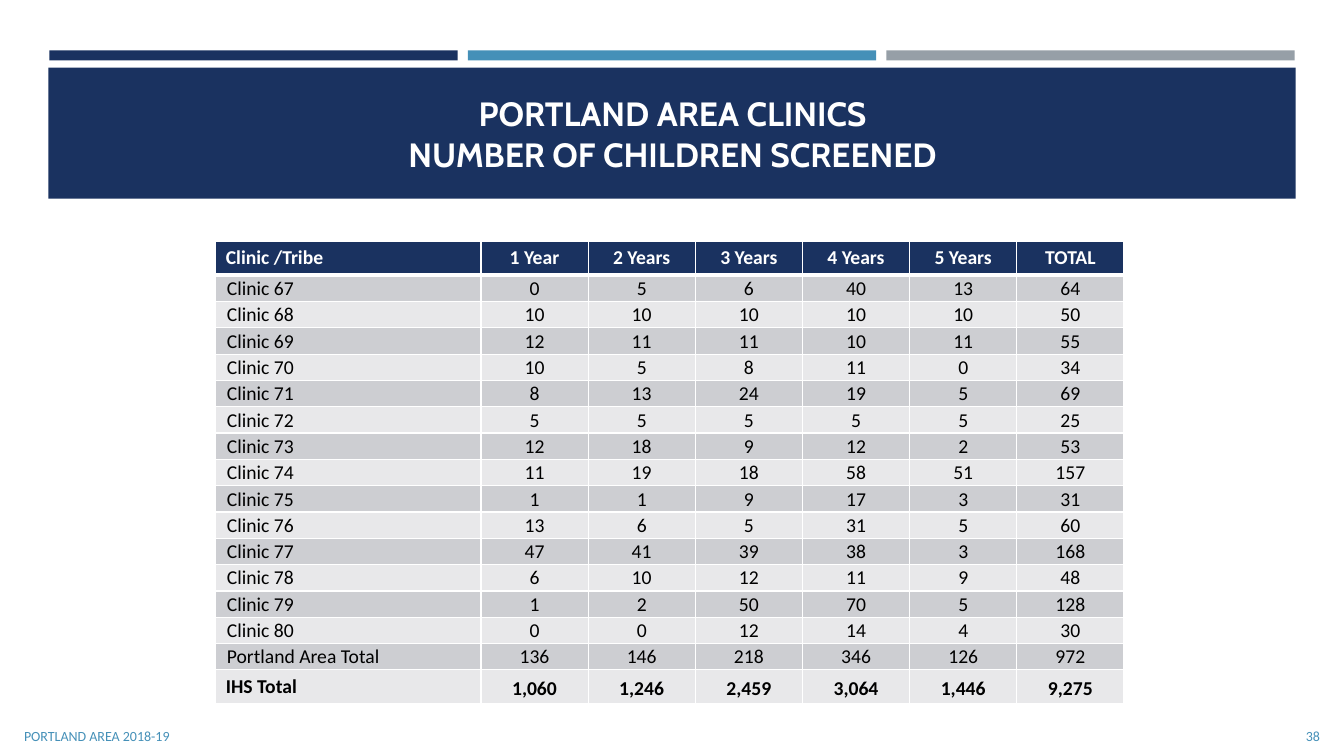
from lxml.etree import SubElement
from pptx import Presentation
from pptx.dml.color import RGBColor
from pptx.enum.shapes import MSO_SHAPE
from pptx.enum.text import MSO_ANCHOR, MSO_AUTO_SIZE, PP_ALIGN
from pptx.oxml.ns import qn
from pptx.util import Inches, Pt

COLORS = {"navy": "1A3260", "blue": "4590B8", "gray": "969FA7",
          "dark": "CDCED2", "light": "E8E8EA", "white": "FFFFFF", "black": "000000"}
HEADS = ["Clinic /Tribe", "1 Year", "2 Years", "3 Years", "4 Years", "5 Years", "TOTAL"]
COUNTS = [
    [0, 5, 6, 40, 13, 64],
    [10, 10, 10, 10, 10, 50],
    [12, 11, 11, 10, 11, 55],
    [10, 5, 8, 11, 0, 34],
    [8, 13, 24, 19, 5, 69],
    [5, 5, 5, 5, 5, 25],
    [12, 18, 9, 12, 2, 53],
    [11, 19, 18, 58, 51, 157],
    [1, 1, 9, 17, 3, 31],
    [13, 6, 5, 31, 5, 60],
    [47, 41, 39, 38, 3, 168],
    [6, 10, 12, 11, 9, 48],
    [1, 2, 50, 70, 5, 128],
    [0, 0, 12, 14, 4, 30],
]
AREA = ["Portland Area Total", 136, 146, 218, 346, 126, 972]
IHS = ["IHS Total", 1060, 1246, 2459, 3064, 1446, 9275]


class Deck:
    def __init__(self):
        self.prs = Presentation()
        self.prs.slide_width, self.prs.slide_height = Inches(13.33), Inches(7.5)
        self.slide = self.prs.slides.add_slide(self.prs.slide_layouts[5])
        self.shapes = self.slide.shapes

    def color(self, name):
        return RGBColor.from_string(COLORS[name])

    def run(self, para, text, size, color, bold=False, font="Calibri"):
        run = para.add_run()
        run.text = text
        run.font.name, run.font.size, run.font.bold = font, Pt(size), bold
        run.font.color.rgb = self.color(color)

    def bar(self, left, top, width, height, color):
        bar = self.shapes.add_shape(MSO_SHAPE.RECTANGLE, Inches(left), Inches(top),
                                    Inches(width), Inches(height))
        bar.shadow.inherit = False
        bar.fill.solid()
        bar.fill.fore_color.rgb = self.color(color)
        bar.line.fill.background()

    def title(self, lines, left, top, width, height):
        """Fill the title placeholder and bring it in front of the band."""
        title = self.shapes.title
        title.left, title.top = Inches(left), Inches(top)
        title.width, title.height = Inches(width), Inches(height)
        frame = title.text_frame
        frame.auto_size, frame.word_wrap = MSO_AUTO_SIZE.NONE, True
        frame.vertical_anchor = MSO_ANCHOR.MIDDLE
        para = frame.paragraphs[0]
        para.alignment = PP_ALIGN.CENTER
        for i, line in enumerate(lines):
            if i:
                para.add_line_break()
            self.run(para, line, 24, "white", True, "Cabin")
        title.element.getparent().append(title.element)

    def note(self, text, left, width, align):
        box = self.shapes.add_textbox(Inches(left), Inches(7.1), Inches(width), Inches(0.4))
        frame = box.text_frame
        frame.word_wrap, frame.vertical_anchor = True, MSO_ANCHOR.MIDDLE
        para = frame.paragraphs[0]
        para.alignment = align
        self.run(para, text, 10, "blue")

    def edge(self, cell, side, width):
        props = cell._tc.get_or_add_tcPr()
        line = SubElement(props, qn("a:ln" + side), w=str(Pt(width)))
        fill = SubElement(line, qn("a:solidFill"))
        SubElement(fill, qn("a:srgbClr"), val=COLORS["white"])

    def cell(self, cell, text, row, col, last):
        head, total = row == 0, row == last
        for side in "LRTB":
            thick = (head and side == "B") or (row == 1 and side == "T")
            self.edge(cell, side, 3 if thick else 1)
        cell.fill.solid()
        shade = "navy" if head else "dark" if row % 2 else "light"
        cell.fill.fore_color.rgb = self.color(shade)
        cell.vertical_anchor = MSO_ANCHOR.MIDDLE
        para = cell.text_frame.paragraphs[0]
        if col:
            para.alignment = PP_ALIGN.CENTER
        if total and col:
            cell.margin_left = cell.margin_right = Inches(0.07)
            cell.margin_top = cell.margin_bottom = 0
            para.line_spacing = 1.15
        elif not head and not total:
            cell.margin_left = cell.margin_right = cell.margin_top = Inches(0.01)
            cell.margin_bottom = 0
            if not col:
                para._p.get_or_add_pPr().set("marL", str(Inches(0.1)))
        self.run(para, text, 14, "white" if head else "black", head or total)

    def table(self, rows, left, top, width, height):
        last = len(rows) - 1
        table = self.shapes.add_table(len(rows), len(rows[0]), Inches(left), Inches(top),
                                      Inches(width), Inches(height)).table
        table.horz_banding = False
        first, tall = 2.63, 0.34
        for i, column in enumerate(table.columns):
            column.width = Inches((width - first) / (len(rows[0]) - 1) if i else first)
        for i, values in enumerate(rows):
            edge = i in (0, last)
            table.rows[i].height = Inches(tall if edge else (height - 2 * tall) / (last - 1))
            for j, value in enumerate(values):
                text = value if isinstance(value, str) else f"{value:,}"
                self.cell(table.cell(i, j), text, i, j, last)


def main():
    deck = Deck()
    for i, color in enumerate(["navy", "blue", "gray"]):
        deck.bar(0.49 + 4.15 * i, 0.5, 4.05, 0.1, color)
    deck.bar(0.48, 0.67, 12.37, 1.3, "navy")
    deck.title(["PORTLAND AREA CLINICS", "NUMBER OF CHILDREN SCREENED"], 0.64, 0.77, 12.06, 1.11)
    clinics = [[f"Clinic {i}", *row] for i, row in enumerate(COUNTS, 67)]
    deck.table([HEADS, *clinics, AREA, IHS], 2.14, 2.39, 9.01, 4.6)
    deck.note("PORTLAND AREA 2018-19", 0.14, 7.56, PP_ALIGN.LEFT)
    deck.note("38", 12.04, 1.15, PP_ALIGN.RIGHT)
    deck.prs.save("out.pptx")


if __name__ == "__main__":
    main()
